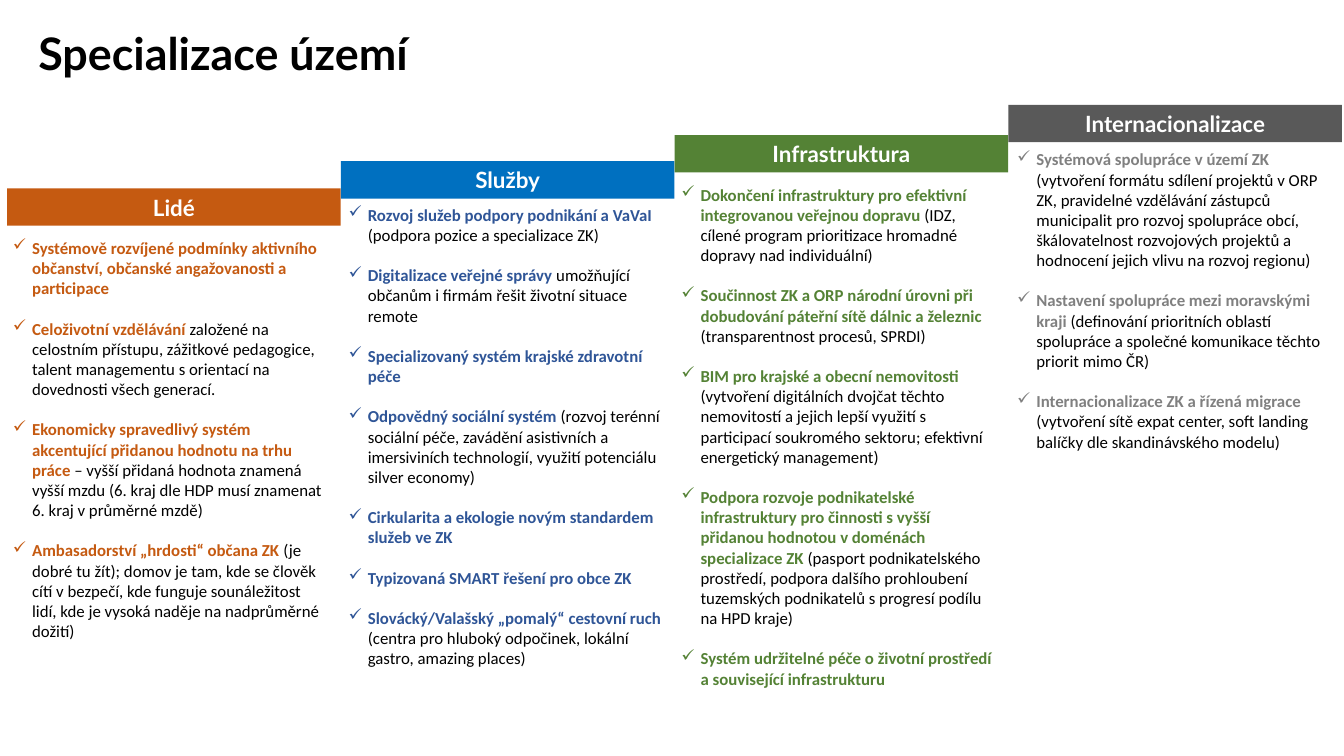
from lxml import etree
from pptx import Presentation
from pptx import util as u
from pptx.dml.color import RGBColor
from pptx.enum import shapes, text
from pptx.oxml import ns

BLACK = RGBColor(0x00, 0x00, 0x00)
WHITE = RGBColor(0xFF, 0xFF, 0xFF)
ORANGE = RGBColor(0xC5, 0x5A, 0x11)
BLUE = RGBColor(0x00, 0x70, 0xC0)
NAVY = RGBColor(0x2F, 0x55, 0x97)
GREEN = RGBColor(0x54, 0x82, 0x35)
DARK_GRAY = RGBColor(0x59, 0x59, 0x59)
GRAY = RGBColor(0x80, 0x80, 0x80)

COLUMN_LEFT = 0.07
COLUMN_WIDTH = 3.31

# heading, band colour, accent colour, band top, list (left, top, height), items (bold, plain)
COLUMNS = [
    ("Lidé", ORANGE, ORANGE, 1.87, (0.03, 2.31, 4.14), [
        ("Systémově rozvíjené podmínky aktivního občanství, občanské angažovanosti a participace", ""),
        ("Celoživotní vzdělávání ",
         "založené na celostním přístupu, zážitkové pedagogice, talent managementu "
         "s orientací na dovednosti všech generací."),
        ("Ekonomicky spravedlivý systém akcentující přidanou hodnotu na trhu práce ",
         "– vyšší přidaná hodnota znamená vyšší mzdu (6. kraj dle HDP musí znamenat "
         "6. kraj v průměrné mzdě)"),
        ("Ambasadorství „hrdosti“ občana ZK ",
         "(je dobré tu žít); domov je tam, kde se člověk cítí v bezpečí, kde funguje "
         "sounáležitost lidí, kde je vysoká naděje na nadprůměrné dožití)"),
    ]),
    ("Služby", BLUE, NAVY, 1.6, (3.36, 1.98, 4.75), [
        ("Rozvoj služeb podpory podnikání a VaVaI", " (podpora pozice a specializace ZK)"),
        ("Digitalizace veřejné správy ",
         "umožňující občanům i firmám řešit životní situace remote"),
        ("Specializovaný systém krajské zdravotní péče", ""),
        ("Odpovědný sociální systém ",
         "(rozvoj terénní sociální péče, zavádění asistivních a imersiviních technologií, "
         "využití potenciálu silver economy)"),
        ("Cirkularita a ekologie novým standardem služeb ve ZK", ""),
        ("Typizovaná SMART řešení pro obce ZK", ""),
        ("Slovácký/Valašský „pomalý“ cestovní ruch ",
         "(centra pro hluboký odpočinek, lokální gastro, amazing places)"),
    ]),
    ("Infrastruktura", GREEN, GREEN, 1.34, (6.66, 1.78, 5.15), [
        ("Dokončení infrastruktury pro efektivní integrovanou veřejnou dopravu ",
         "(IDZ, cílené program prioritizace hromadné dopravy nad individuální)"),
        ("Součinnost ZK a ORP národní úrovni při dobudování páteřní sítě dálnic a železnic ",
         "(transparentnost procesů, SPRDI)"),
        ("BIM pro krajské a obecní nemovitosti ",
         "(vytvoření digitálních dvojčat těchto nemovitostí a jejich lepší využití "
         "s participací soukromého sektoru; efektivní energetický management)"),
        ("Podpora rozvoje podnikatelské infrastruktury pro činnosti s vyšší přidanou "
         "hodnotou v doménách specializace ZK ",
         "(pasport podnikatelského prostředí, podpora dalšího prohloubení tuzemských "
         "podnikatelů s progresí podílu na HPD kraje)"),
        ("Systém udržitelné péče o životní prostředí a související infrastrukturu", ""),
    ]),
    ("Internacionalizace", DARK_GRAY, GRAY, 1.04, (9.99, 1.43, 3.13), [
        ("Systémová spolupráce v území ZK ",
         "(vytvoření formátu sdílení projektů v ORP ZK, pravidelné vzdělávání zástupců "
         "municipalit pro rozvoj spolupráce obcí, škálovatelnost rozvojových projektů "
         "a hodnocení jejich vlivu na rozvoj regionu)"),
        ("Nastavení spolupráce mezi moravskými kraji ",
         "(definování prioritních oblastí spolupráce a společné komunikace těchto "
         "priorit mimo ČR)"),
        ("Internacionalizace ZK a řízená migrace ",
         "(vytvoření sítě expat center, soft landing balíčky dle skandinávského modelu)"),
    ]),
]


class SlideBuilder:
    heading_font = "Lato"
    body_font = "Calibri"
    title_size = u.Pt(32)
    band_size = u.Pt(16)
    body_size = u.Pt(12)
    item_gap = u.Pt(14.4)
    indent = u.Inches(0.19)

    def __init__(self, prs):
        self.s = prs.slides.add_slide(prs.slide_layouts[5])

    def format_run(self, r, font, size, color, bold=True):
        r.font.name = font
        r.font.size = size
        r.font.color.rgb = color
        r.font.bold = bold

    def title(self, words, left, top, width, height):
        sp = self.s.shapes.title
        sp.left, sp.top, sp.width, sp.height = map(u.Inches, (left, top, width, height))
        tf = sp.text_frame
        tf.text = words
        tf.auto_size = text.MSO_AUTO_SIZE.NONE
        tf.vertical_anchor = text.MSO_ANCHOR.TOP
        p = tf.paragraphs[0]
        p.alignment = text.PP_ALIGN.LEFT
        self.format_run(p.runs[0], self.heading_font, self.title_size, BLACK)

    def band(self, words, color, left, top, width, height=0.37):
        sp = self.s.shapes.add_shape(shapes.MSO_SHAPE.RECTANGLE,
                                     *map(u.Inches, (left, top, width, height)))
        sp.shadow.inherit = False
        sp.fill.solid()
        sp.fill.fore_color.rgb = color
        sp.line.fill.background()
        tf = sp.text_frame
        tf.text = words
        tf.vertical_anchor = text.MSO_ANCHOR.MIDDLE
        p = tf.paragraphs[0]
        p.alignment = text.PP_ALIGN.CENTER
        self.format_run(p.runs[0], self.heading_font, self.band_size, WHITE)

    def check_list(self, items, color, left, top, width, height):
        sp = self.s.shapes.add_textbox(*map(u.Inches, (left, top, width, height)))
        tf = sp.text_frame
        tf.word_wrap = True
        tf.auto_size = text.MSO_AUTO_SIZE.SHAPE_TO_FIT_TEXT
        for i, (bold_words, plain_words) in enumerate(items):
            p = tf.add_paragraph() if i else tf.paragraphs[0]
            if i:
                p.space_before = self.item_gap
            self.check_bullet(p)
            for words, c, bold in ((bold_words, color, True), (plain_words, BLACK, False)):
                if words:
                    r = p.add_run()
                    r.text = words
                    self.format_run(r, self.body_font, self.body_size, c, bold)

    def check_bullet(self, p):
        pPr = p._p.get_or_add_pPr()
        pPr.set("marL", str(self.indent))
        pPr.set("indent", str(-self.indent))
        etree.SubElement(pPr, ns.qn("a:buChar")).set("char", "✓")


def main():
    prs = Presentation()
    prs.slide_width, prs.slide_height = u.Inches(13.33), u.Inches(7.5)
    slide = SlideBuilder(prs)
    slide.title("Specializace území", 0.28, 0.21, 12.15, 0.64)
    for i, (heading, band_color, accent, band_top, place, items) in enumerate(COLUMNS):
        slide.band(heading, band_color, COLUMN_LEFT + i * COLUMN_WIDTH, band_top, COLUMN_WIDTH)
        left, top, height = place
        slide.check_list(items, accent, left, top, COLUMN_WIDTH, height)
    prs.save("out.pptx")


if __name__ == "__main__":
    main()
